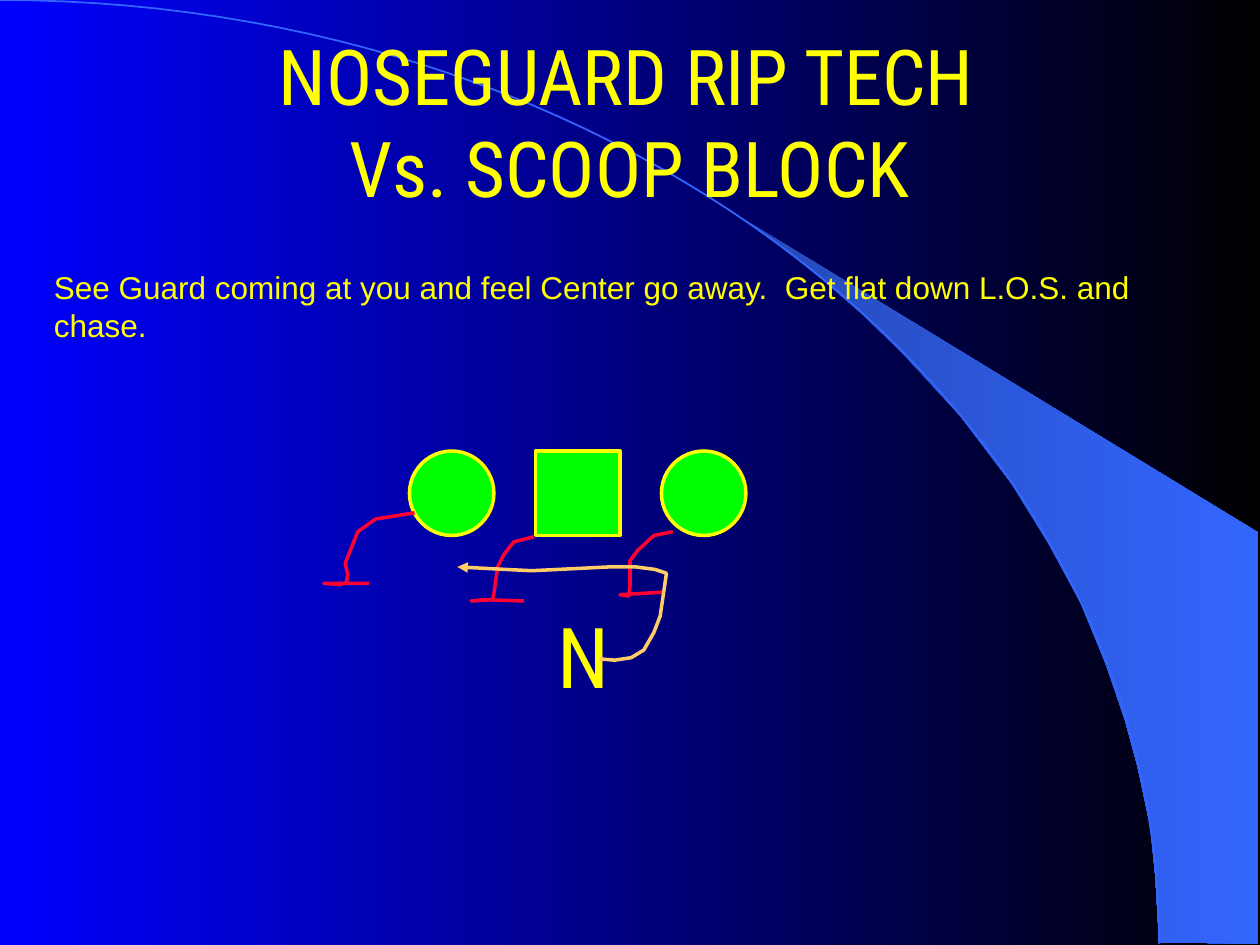
"""Build the noseguard rip technique slide."""
from dataclasses import dataclass
from lxml.etree import SubElement
from pptx import Presentation
from pptx.dml.color import RGBColor as RGB
from pptx.enum.shapes import MSO_SHAPE as Shape
from pptx.enum.text import MSO_ANCHOR as Anchor, MSO_AUTO_SIZE as Auto, PP_ALIGN as Align
from pptx.oxml.ns import qn
from pptx.util import Inches, Pt

Points = list[tuple[float, float]]


@dataclass(frozen=True)
class Theme:
    yellow: str = "FFFF00"
    green: str = "00FF00"
    red: str = "FF0033"
    tan: str = "FFCC66"
    blue: str = "3366FF"
    background: tuple = ("0000FF", "000000")
    beam: tuple = ("2449B6", "3366FF")
    display: str = "Roboto Condensed"
    body: str = "Arial"
    title_size: int = 44
    lead_size: int = 28
    body_size: int = 18
    mark_size: int = 48
    stroke: int = 2


@dataclass(frozen=True)
class Player:
    column: int
    shape: Shape


@dataclass(frozen=True)
class Route:
    points: Points
    color: str
    arrow: bool = False


T = Theme()
COLUMN, FIRST_X, LINE_Y, PLAYER_SIZE = 1, 3.25, 3.58, 0.67
ARC = ((0, 0), (5.08, 0), (9.2, 3.35), (9.2, 7.49))
BEAM = [(9.2, 7.48), (9.99, 7.49), (9.99, 4.23), (5.89, 1.73), (6.24, 1.99), (6.53, 2.22),
        (6.85, 2.5), (7.16, 2.8), (7.62, 3.3), (8.03, 3.84), (8.32, 4.31), (8.58, 4.79),
        (8.78, 5.28), (8.93, 5.72), (9.03, 6.09), (9.13, 6.56), (9.17, 6.96)]
PLAYERS = [Player(1, Shape.RECTANGLE), Player(0, Shape.OVAL), Player(2, Shape.OVAL)]
ROUTES = [
    Route([(3.29, 4.07), (2.98, 4.12), (2.84, 4.22), (2.74, 4.47), (2.76, 4.56), (2.75, 4.62),
           (2.7, 4.64), (2.57, 4.63), (2.93, 4.63)], T.red),
    Route([(4.24, 4.26), (4.08, 4.3), (4, 4.4), (3.95, 4.5), (3.92, 4.71), (3.91, 4.76),
           (3.74, 4.77), (3.84, 4.76), (4.16, 4.77)], T.red),
    Route([(5.34, 4.22), (5.19, 4.25), (5.06, 4.37), (5, 4.45), (5, 4.65), (4.99, 4.73),
           (4.92, 4.72), (5.26, 4.7)], T.red),
    Route([(4.76, 5.23), (4.88, 5.24), (5.01, 5.22), (5.11, 5.16), (5.19, 5.02), (5.24, 4.89),
           (5.29, 4.55), (5.2, 4.52), (5.05, 4.5), (4.83, 4.5), (4.22, 4.53), (3.63, 4.5)],
          T.tan, True),
]


def bezier(controls: tuple, steps: int = 60) -> Points:
    """Sample a cubic curve at equal parameter steps."""
    def at(t: float) -> tuple[float, float]:
        """Return the curve point for one parameter."""
        weights = ((1 - t) ** 3, 3 * t * (1 - t) ** 2, 3 * t * t * (1 - t), t ** 3)
        return tuple(sum(w * c[axis] for w, c in zip(weights, controls)) for axis in (0, 1))
    return [at(i / steps) for i in range(steps + 1)]


def gradient(fill, colors: tuple) -> None:
    """Apply a left-to-right gradient."""
    fill.gradient()
    fill.gradient_angle = 0
    for stop, color, position in zip(fill.gradient_stops, colors, (0, 1)):
        stop.color.rgb = RGB.from_string(color)
        stop.position = position


def outline(sp, color: str, width: float) -> None:
    """Give a shape a solid line."""
    sp.line.color.rgb = RGB.from_string(color)
    sp.line.width = Pt(width)


def freeform(s, points: Points, close: bool = False):
    """Draw an unshadowed outline through the points."""
    start, *rest = [(Inches(x), Inches(y)) for x, y in points]
    builder = s.shapes.build_freeform(*start)
    builder.add_line_segments(rest, close=close)
    sp = builder.convert_to_shape()
    sp.shadow.inherit = False
    return sp


def curve(s, points: Points, color: str, width: float):
    """Draw an open, unfilled line."""
    sp = freeform(s, points)
    sp.fill.background()
    outline(sp, color, width)
    return sp


def draw_player(s, player: Player) -> None:
    """Draw one lineman in his column."""
    x = FIRST_X + player.column * COLUMN
    sp = s.shapes.add_shape(player.shape, Inches(x), Inches(LINE_Y),
                            Inches(PLAYER_SIZE), Inches(PLAYER_SIZE))
    sp.shadow.inherit = False
    sp.fill.solid()
    sp.fill.fore_color.rgb = RGB.from_string(T.green)
    outline(sp, T.yellow, T.stroke)


def draw_route(s, route: Route) -> None:
    """Draw one path of movement."""
    sp = curve(s, route.points, route.color, T.stroke)
    if route.arrow:
        SubElement(sp.line._get_or_add_ln(), qn("a:tailEnd"), type="triangle")


def style(font, name: str, size: int) -> None:
    """Set a yellow font."""
    font.name, font.size = name, Pt(size)
    font.color.rgb = RGB.from_string(T.yellow)


def add_text(s, text: str, box: tuple, name: str, size: int, wrap: bool) -> None:
    """Add a text box that grows with its text."""
    tf = s.shapes.add_textbox(*map(Inches, box)).text_frame
    tf.text = text
    tf.word_wrap = wrap
    tf.auto_size = Auto.SHAPE_TO_FIT_TEXT
    style(tf.paragraphs[0].runs[0].font, name, size)


def add_title(s) -> None:
    """Place and format the two-line title."""
    sp = s.shapes.title
    sp.left, sp.top, sp.width, sp.height = map(Inches, (0.75, 0, 8.5, 1.92))
    tf = sp.text_frame
    tf.vertical_anchor = Anchor.MIDDLE
    tf.auto_size = Auto.NONE
    p = tf.paragraphs[0]
    p.text = " "
    p.alignment = Align.CENTER
    p.add_run().text = "NOSEGUARD RIP TECH "
    p.add_line_break()
    p.add_run().text = "Vs. SCOOP BLOCK"
    for r, size in zip(p.runs, (T.lead_size, T.title_size, T.title_size)):
        style(r.font, T.display, size)


def main() -> None:
    """Assemble and save the slide."""
    prs = Presentation()
    prs.slide_width, prs.slide_height = Inches(10), Inches(7.5)
    s = prs.slides.add_slide(prs.slide_layouts[5])
    gradient(s.background.fill, T.background)
    beam = freeform(s, BEAM, close=True)
    gradient(beam.fill, T.beam)
    beam.line.fill.background()
    curve(s, bezier(ARC), T.blue, 1)
    title = s.shapes.title._element
    s.shapes._spTree.append(title)
    add_title(s)
    add_text(s, "See Guard coming at you and feel Center go away.  Get flat down L.O.S. and chase.",
             (0.33, 2.08, 9.25, 0.7), T.body, T.body_size, True)
    for player in PLAYERS:
        draw_player(s, player)
    add_text(s, "N", (4.33, 4.75, 0.56, 0.9), T.display, T.mark_size, False)
    for route in ROUTES:
        draw_route(s, route)
    prs.save("out.pptx")


if __name__ == "__main__":
    main()
